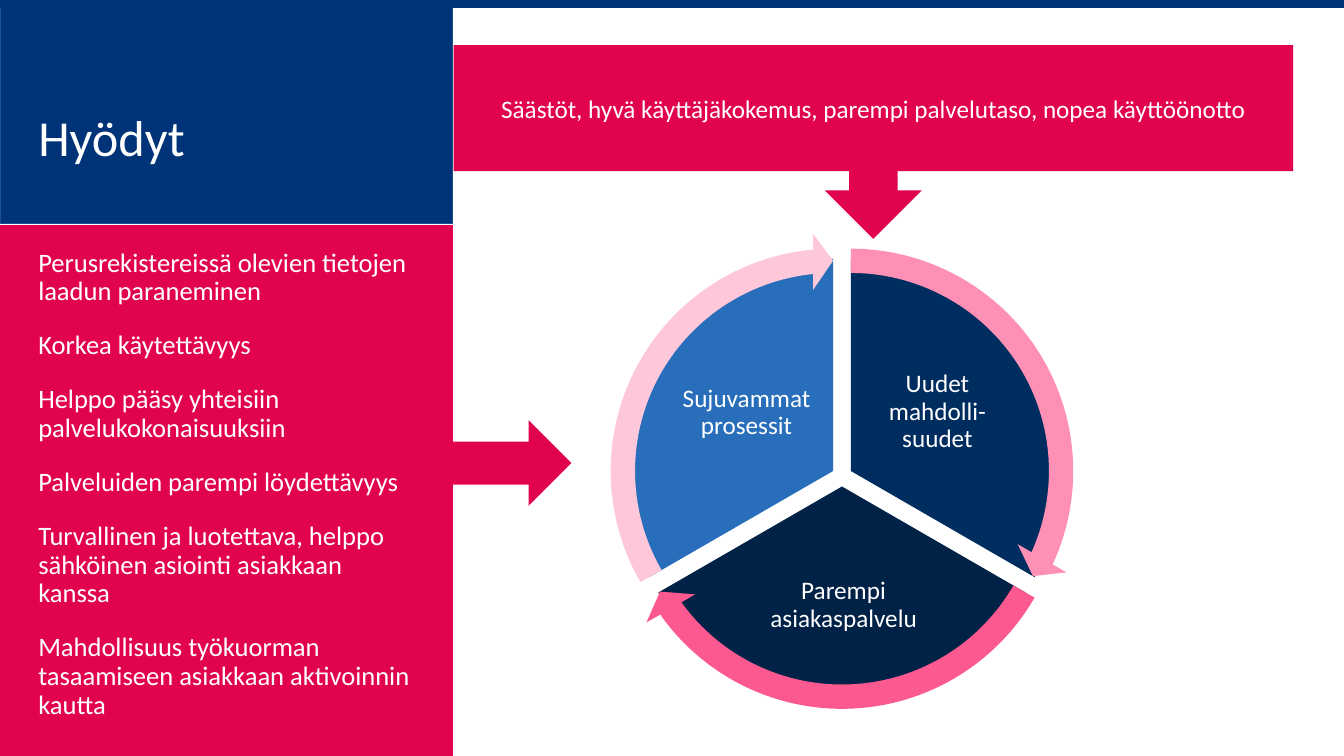
from math import cos, radians, sin

from lxml import etree
from pptx import Presentation
from pptx.dml.color import RGBColor
from pptx.enum.shapes import MSO_CONNECTOR, MSO_SHAPE
from pptx.enum.text import MSO_ANCHOR, MSO_AUTO_SIZE, PP_ALIGN
from pptx.oxml.ns import qn
from pptx.util import Cm, Pt

RECT, PIE = MSO_SHAPE.RECTANGLE, MSO_SHAPE.PIE
CIRCULAR_ARROW = MSO_SHAPE.CIRCULAR_ARROW
CENTER, LEFT = PP_ALIGN.CENTER, PP_ALIGN.LEFT
MIDDLE, TOP = MSO_ANCHOR.MIDDLE, MSO_ANCHOR.TOP

FONT = "Calibri"
WHITE, NAVY, RED = "FFFFFF", "003378", "E20350"

TITLE = "Hyödyt"
BENEFITS = [
    "Perusrekistereissä olevien tietojen laadun paraneminen",
    "Korkea käytettävyys",
    "Helppo pääsy yhteisiin palvelukokonaisuuksiin",
    "Palveluiden parempi löydettävyys",
    "Turvallinen ja luotettava, helppo sähköinen asiointi asiakkaan kanssa",
    "Mahdollisuus työkuorman tasaamiseen asiakkaan aktivoinnin kautta",
]
CALLOUT = "Säästöt, hyvä käyttäjäkokemus, parempi palvelutaso, nopea käyttöönotto"

# text, start angle, slice colour, arrow colour, label box in cm
SECTORS = [
    ("Uudet mahdolli-suudet", 270, "002D5F", "FE90B6", (21.72, 8.79, 3.81, 3.18)),
    ("Parempi asiakaspalvelu", 30, "002247", "FD5991", (18.42, 13.88, 5.68, 2.75)),
    ("Sujuvammat prosessit", 150, "296EBB", "FEC8DA", (16.93, 8.83, 3.77, 3.14)),
]
SWEEP = 120
CENTER_X, CENTER_Y, OFFSET = 21.22, 12.0, 0.26
PIE_SIZE, ARROW_SIZE = 10.69, 12.01
HEAD_ANGLE, BAND, HEAD = 5.46, 0.051, 0.059

SIDE_WIDTH, TITLE_HEIGHT = 11.4, 5.64
TEXT_LEFT, TEXT_WIDTH = 0.71, 10.11


def color(value):
    return RGBColor.from_string(value)


def add_block(kind, box, fill, line=None):
    sp = s.shapes.add_shape(kind, *map(Cm, box))
    sp.shadow.inherit = False
    sp.fill.solid()
    sp.fill.fore_color.rgb = color(fill)
    if line:
        sp.line.color.rgb = color(line)
        sp.line.width = Pt(1)
    else:
        sp.line.fill.background()
    return sp


def write(sp, lines, size, align, anchor=MIDDLE, spacing=0.9):
    tf = sp.text_frame
    tf.word_wrap = True
    tf.auto_size = MSO_AUTO_SIZE.NONE
    tf.vertical_anchor = anchor
    tf.text = "\n".join(lines)
    for i, p in enumerate(tf.paragraphs):
        p.alignment = align
        p.line_spacing = spacing
        p.space_before = Pt(12 if i else 0)
        p.space_after = Pt(6 if len(lines) > 1 else 0)
        for r in p.runs:
            r.font.name = FONT
            r.font.size = Pt(size)
            r.font.color.rgb = color(WHITE)
    return tf


def place(sp, left, top, width, height):
    """Move a placeholder and bring it in front of the panels."""
    sp.left, sp.top, sp.width, sp.height = map(Cm, (left, top, width, height))
    s.shapes._spTree.append(sp._element)


def adj(degrees):
    """Turn degrees into the adjustment unit of pies and circular arrows."""
    return degrees % 360 * 0.6


def add_round(kind, size, mid, fill, adjustments):
    x, y = mid
    sp = add_block(kind, (x - size / 2, y - size / 2, size, size), fill)
    for i, value in enumerate(adjustments):
        sp.adjustments[i] = value


prs = Presentation()
prs.slide_width, prs.slide_height = Cm(33.87), Cm(19.05)
s = prs.slides.add_slide(prs.slide_layouts[1])
title, body = s.placeholders

# Side panels
add_block(RECT, (0, TITLE_HEIGHT, SIDE_WIDTH, 19.05 - TITLE_HEIGHT), RED, RED)
divider = s.shapes.add_connector(
    MSO_CONNECTOR.STRAIGHT, 0, Cm(TITLE_HEIGHT), Cm(11.5), Cm(TITLE_HEIGHT))
divider.line.color.rgb = color(WHITE)
divider.line.width = Pt(1)
etree.SubElement(divider._element.spPr, qn("a:effectLst"))
add_block(RECT, (0, 0, SIDE_WIDTH, TITLE_HEIGHT), NAVY, "1E518A")
add_block(RECT, (0, 0, 33.87, 0.2), "003479")

place(title, TEXT_LEFT, 1.27, TEXT_WIDTH, 4.5)
write(title, [TITLE], 36, LEFT)
place(body, TEXT_LEFT, 6.15, TEXT_WIDTH, 11.91)
for p in write(body, BENEFITS, 19, LEFT, TOP).paragraphs:
    pPr = p._p.get_or_add_pPr()
    pPr.set("marL", "0")
    pPr.set("indent", "0")
    etree.SubElement(pPr, qn("a:buNone"))

# Arrows leading to the wheel
callout = add_block(MSO_SHAPE.DOWN_ARROW_CALLOUT, (11.43, 1.14, 21.16, 4.88), RED)
write(callout, [CALLOUT], 18, CENTER, spacing=1.0)
add_block(MSO_SHAPE.RIGHT_ARROW, (10.8, 10.59, 3.6, 2.16), RED)

# Wheel: each sector is pushed out along its middle angle
middles = []
for text, start, fill, _, box in SECTORS:
    angle = radians(start + SWEEP / 2)
    mid = (CENTER_X + OFFSET * cos(angle), CENTER_Y + OFFSET * sin(angle))
    middles.append(mid)
    add_round(PIE, PIE_SIZE, mid, fill, (adj(start), adj(start + SWEEP)))
    label = s.shapes.add_textbox(*map(Cm, box))
    tf = write(label, [text], 18, CENTER)
    tf.margin_left = tf.margin_right = tf.margin_top = tf.margin_bottom = 0

for (_, start, _, fill, _), mid in zip(SECTORS, middles):
    tip = adj(start + SWEEP - HEAD_ANGLE)
    add_round(CIRCULAR_ARROW, ARROW_SIZE, mid, fill,
              (BAND, adj(HEAD_ANGLE), tip, adj(start), HEAD))

prs.save("out.pptx")
